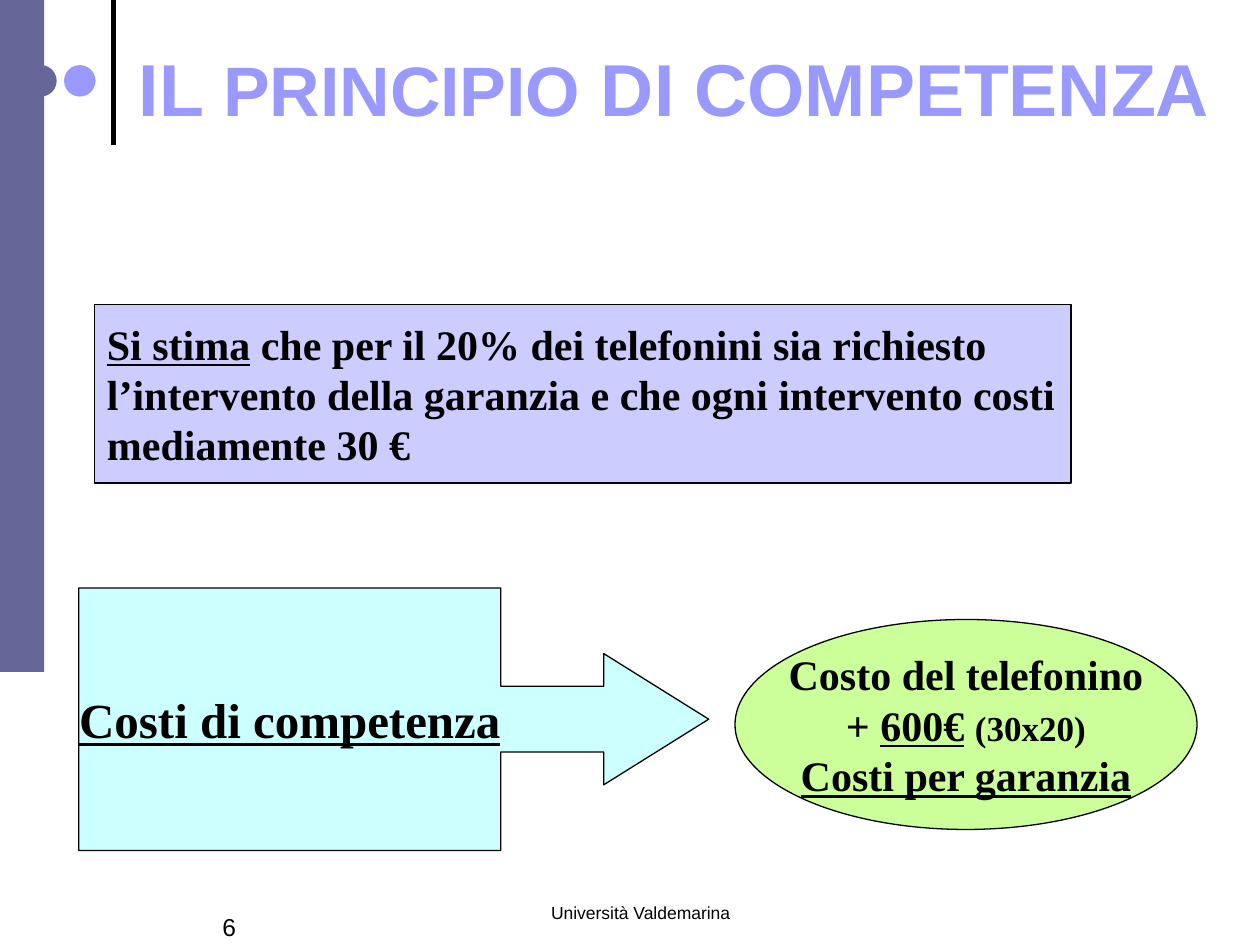
from dataclasses import dataclass

from lxml import etree
from pptx import Presentation
from pptx.dml.color import RGBColor
from pptx.enum.shapes import MSO_CONNECTOR, MSO_SHAPE
from pptx.enum.text import MSO_ANCHOR, PP_ALIGN
from pptx.oxml.ns import qn
from pptx.util import Inches, Pt

RECTANGLE = MSO_SHAPE.RECTANGLE
ELLIPSE = MSO_SHAPE.OVAL
CALLOUT = MSO_SHAPE.RIGHT_ARROW_CALLOUT
STRAIGHT = MSO_CONNECTOR.STRAIGHT
TOP, MIDDLE = MSO_ANCHOR.TOP, MSO_ANCHOR.MIDDLE
LEFT, CENTER = PP_ALIGN.LEFT, PP_ALIGN.CENTER

WIDTH, HEIGHT = Inches(10), Inches(7.5)
COLUMNS, ROWS = 120, 90
SANS, SERIF = "Arial", "Times New Roman"
COLORS = {
    "black": "000000",
    "slate": "666699",
    "periwinkle": "9999FF",
    "lavender": "CCCCFF",
    "aqua": "CCFFFF",
    "lime": "CCFF99",
}


@dataclass(frozen=True)
class Area:
    column: float
    row: float
    columns: float
    rows: float

    def lengths(self) -> tuple:
        return (across(self.column), down(self.row),
                across(self.columns), down(self.rows))


@dataclass(frozen=True)
class Span:
    text: str
    size: float
    underline: bool = False


@dataclass(frozen=True)
class Label:
    area: Area
    lines: tuple
    color: str = "black"
    bold: bool = False
    align: int = CENTER
    anchor: int = TOP
    bottom_margin: float = 0.05


@dataclass(frozen=True)
class Block:
    kind: int
    area: Area
    fill: str
    lines: tuple = ()
    align: int = CENTER
    outlined: bool = True
    adjustments: tuple = ()


def across(columns: float) -> int:
    return round(WIDTH * columns / COLUMNS)


def down(rows: float) -> int:
    return round(HEIGHT * rows / ROWS)


def rgb(name: str) -> RGBColor:
    return RGBColor.from_string(COLORS[name])


def write_lines(text_frame, lines: tuple, font_name: str, color: str,
                bold: bool, align: int) -> None:
    for index, spans in enumerate(lines):
        paragraph = text_frame.paragraphs[0] if index == 0 else text_frame.add_paragraph()
        paragraph.alignment = align
        for span in spans:
            run = paragraph.add_run()
            run.text = span.text
            run.font.name = font_name
            run.font.size = Pt(span.size)
            run.font.bold = bold
            run.font.underline = span.underline
            run.font.color.rgb = rgb(color)


def draw_label(slide, label: Label) -> None:
    text_frame = slide.shapes.add_textbox(*label.area.lengths()).text_frame
    text_frame.word_wrap = True
    text_frame.vertical_anchor = label.anchor
    text_frame.margin_bottom = Inches(label.bottom_margin)
    write_lines(text_frame, label.lines, SANS, label.color, label.bold, label.align)


def draw_block(slide, block: Block) -> None:
    shape = slide.shapes.add_shape(block.kind, *block.area.lengths())
    shape.shadow.inherit = False
    shape.fill.solid()
    shape.fill.fore_color.rgb = rgb(block.fill)
    for index, value in enumerate(block.adjustments):
        shape.adjustments[index] = value
    if block.outlined:
        shape.line.color.rgb = rgb("black")
        shape.line.width = Pt(0.75)
    else:
        shape.line.fill.background()
    if block.lines:
        shape.text_frame.word_wrap = False
        shape.text_frame.vertical_anchor = MIDDLE
        write_lines(shape.text_frame, block.lines, SERIF, "black", True, block.align)


def draw_title_rule(slide, column: float, rows: float) -> None:
    rule = slide.shapes.add_connector(
        STRAIGHT, across(column), down(rows), across(column), 0)
    rule.line.color.rgb = rgb("black")
    rule.line.width = Pt(3)
    etree.SubElement(rule._element.spPr, qn("a:effectLst"))


DECORATIONS = (
    Block(ELLIPSE, Area(2.4, 6.2, 3, 3), "slate", outlined=False),
    Block(ELLIPSE, Area(6.1, 6.2, 3, 3), "periwinkle", outlined=False),
    Block(RECTANGLE, Area(0, 0, 4.2, 64), "slate", outlined=False),
)

LABELS = (
    Label(Area(42, 85.3, 38, 6), ((Span("Università Valdemarina", 10),),)),
    Label(Area(20, 86.3, 17, 6), ((Span("6", 14),),), align=LEFT),
    Label(Area(10.8, 2.5, 106.8, 20),
          ((Span("IL ", 42), Span("PRINCIPIO", 40), Span(" DI COMPETENZA", 42)),),
          color="periwinkle", bold=True, anchor=MIDDLE, bottom_margin=0.75),
)

BLOCKS = (
    Block(RECTANGLE, Area(9, 29, 93, 17), "lavender", (
        (Span("Si stima", 24, True),
         Span(" che per il 20% dei telefonini sia richiesto", 24)),
        (Span("l’intervento della garanzia e che ogni intervento costi", 24),),
        (Span("mediamente 30 €", 24),),
    ), align=LEFT),
    Block(CALLOUT, Area(7.5, 56, 60, 25), "aqua",
          ((Span("Costi di competenza", 28, True),),),
          adjustments=(0.25, 0.25, 0.4, 0.67)),
    Block(ELLIPSE, Area(70, 59, 44, 20), "lime", (
        (Span("Costo del telefonino", 24),),
        (Span("+ ", 24), Span("600€", 24, True), Span(" ", 24), Span("(30x20)", 20)),
        (Span("Costi per garanzia", 24, True),),
    )),
)


def main() -> None:
    presentation = Presentation()
    presentation.slide_width, presentation.slide_height = WIDTH, HEIGHT
    slide = presentation.slides.add_slide(presentation.slide_layouts[6])
    draw_title_rule(slide, 10.8, 13.8)
    for decoration in DECORATIONS:
        draw_block(slide, decoration)
    for label in LABELS:
        draw_label(slide, label)
    for block in BLOCKS:
        draw_block(slide, block)
    presentation.save("out.pptx")


if __name__ == "__main__":
    main()
